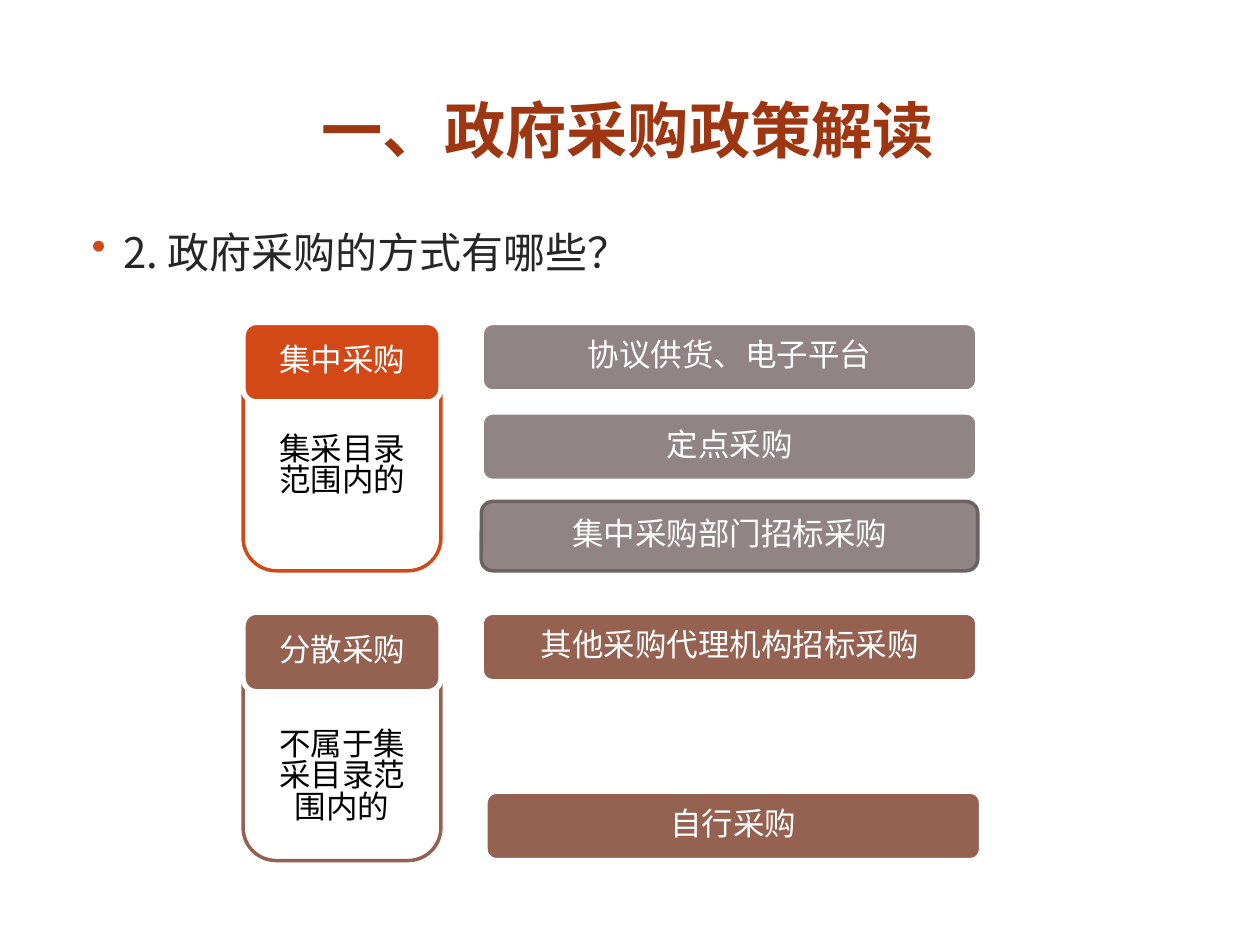
from dataclasses import dataclass

from lxml.etree import SubElement
from pptx import Presentation
from pptx.dml.color import RGBColor
from pptx.enum.shapes import MSO_SHAPE as Shape
from pptx.enum.text import MSO_ANCHOR as Anchor, PP_ALIGN as Align
from pptx.oxml.ns import qn
from pptx.util import Inches, Pt


@dataclass(frozen=True)
class Theme:
    font: str = "Noto Sans CJK SC"
    title: str = "9E3611"
    body: str = "262626"
    white: str = "FFFFFF"
    black: str = "000000"
    orange: str = "D34817"
    brown: str = "956251"
    gray: str = "918485"
    outline: str = "6B6262"
    title_size: int = 35
    body_size: int = 24
    label_size: int = 18
    label_spacing: float = 0.83


THEME = Theme()
CARD_LEFT, CARD_WIDTH = 1.93, 1.57
CARD_HEIGHT, CARD_DROP, HEADER_HEIGHT = 1.65, 0.32, 0.63
BAR_LEFT, BAR_WIDTH, BAR_HEIGHT, BAR_STEP = 3.82, 3.94, 0.55, 0.71
CENTRAL_TOP, SPREAD_TOP = 2.56, 4.86


def add_span(para, text, size, color, bold=False):
    span = para.add_run()
    span.text = text
    span.font.name = THEME.font
    span.font.size = Pt(size)
    span.font.bold = bold
    span.font.color.rgb = RGBColor.from_string(color)
    SubElement(span.font._element, qn("a:ea"), typeface=THEME.font)


def add_title(page, text):
    title = page.shapes.title
    title.left, title.top = Inches(0.47), Inches(0.45)
    title.width, title.height = Inches(9.03), Inches(1.14)
    title.text_frame.vertical_anchor = Anchor.MIDDLE
    para = title.text_frame.paragraphs[0]
    para.alignment = Align.CENTER
    add_span(para, text, THEME.title_size, THEME.title, bold=True)


def add_question(page, text):
    box = page.shapes.add_textbox(Inches(0.5), Inches(1.75), Inches(9), Inches(5.31))
    box.text_frame.word_wrap = True
    para = box.text_frame.paragraphs[0]
    properties = para._p.get_or_add_pPr()
    properties.set("marL", str(Inches(0.38)))
    properties.set("indent", str(Inches(-0.25)))
    bullet_color = SubElement(properties, qn("a:buClr"))
    SubElement(bullet_color, qn("a:srgbClr"), val=THEME.orange)
    SubElement(properties, qn("a:buChar"), char="•")
    add_span(para, text, THEME.body_size, THEME.body)


def add_label(page, text, left, top, width, height, fill, line, line_width=3,
              color=THEME.white, inset_top=0.05):
    box = page.shapes.add_shape(Shape.ROUNDED_RECTANGLE, Inches(left), Inches(top),
                                Inches(width), Inches(height))
    box.shadow.inherit = False
    box.fill.solid()
    box.fill.fore_color.rgb = RGBColor.from_string(fill)
    box.line.color.rgb = RGBColor.from_string(line)
    box.line.width = Pt(line_width)
    frame = box.text_frame
    frame.word_wrap = True
    frame.vertical_anchor = Anchor.MIDDLE
    frame.margin_top = Inches(inset_top)
    para = frame.paragraphs[0]
    para.alignment = Align.CENTER
    para.line_spacing = THEME.label_spacing
    add_span(para, text, THEME.label_size, color)


def add_card(page, heading, scope, top, color, inset_top=0.05):
    add_label(page, scope, CARD_LEFT, top + CARD_DROP, CARD_WIDTH, CARD_HEIGHT,
              THEME.white, color, 2, THEME.black, inset_top)
    add_label(page, heading, CARD_LEFT, top, CARD_WIDTH, HEADER_HEIGHT, color, THEME.white)


def add_bar(page, text, top, fill, line=THEME.white, line_width=3, left=BAR_LEFT):
    add_label(page, text, left, top, BAR_WIDTH, BAR_HEIGHT, fill, line, line_width)


def main():
    deck = Presentation()
    deck.slide_width, deck.slide_height = Inches(10), Inches(7.5)
    page = deck.slides.add_slide(deck.slide_layouts[5])

    add_title(page, "一、政府采购政策解读")
    add_question(page, "2. 政府采购的方式有哪些？")

    add_card(page, "集中采购", "集采目录范围内的", CENTRAL_TOP, THEME.orange)
    add_card(page, "分散采购", "不属于集采目录范围内的", SPREAD_TOP, THEME.brown, inset_top=0.38)

    add_bar(page, "协议供货、电子平台", CENTRAL_TOP, THEME.gray)
    add_bar(page, "定点采购", CENTRAL_TOP + BAR_STEP, THEME.gray)
    add_bar(page, "集中采购部门招标采购", CENTRAL_TOP + 2 * BAR_STEP, THEME.gray, THEME.outline, 2)
    add_bar(page, "其他采购代理机构招标采购", SPREAD_TOP, THEME.brown)
    add_bar(page, "自行采购", SPREAD_TOP + 2 * BAR_STEP, THEME.brown, left=3.85)

    deck.save("out.pptx")


if __name__ == "__main__":
    main()
